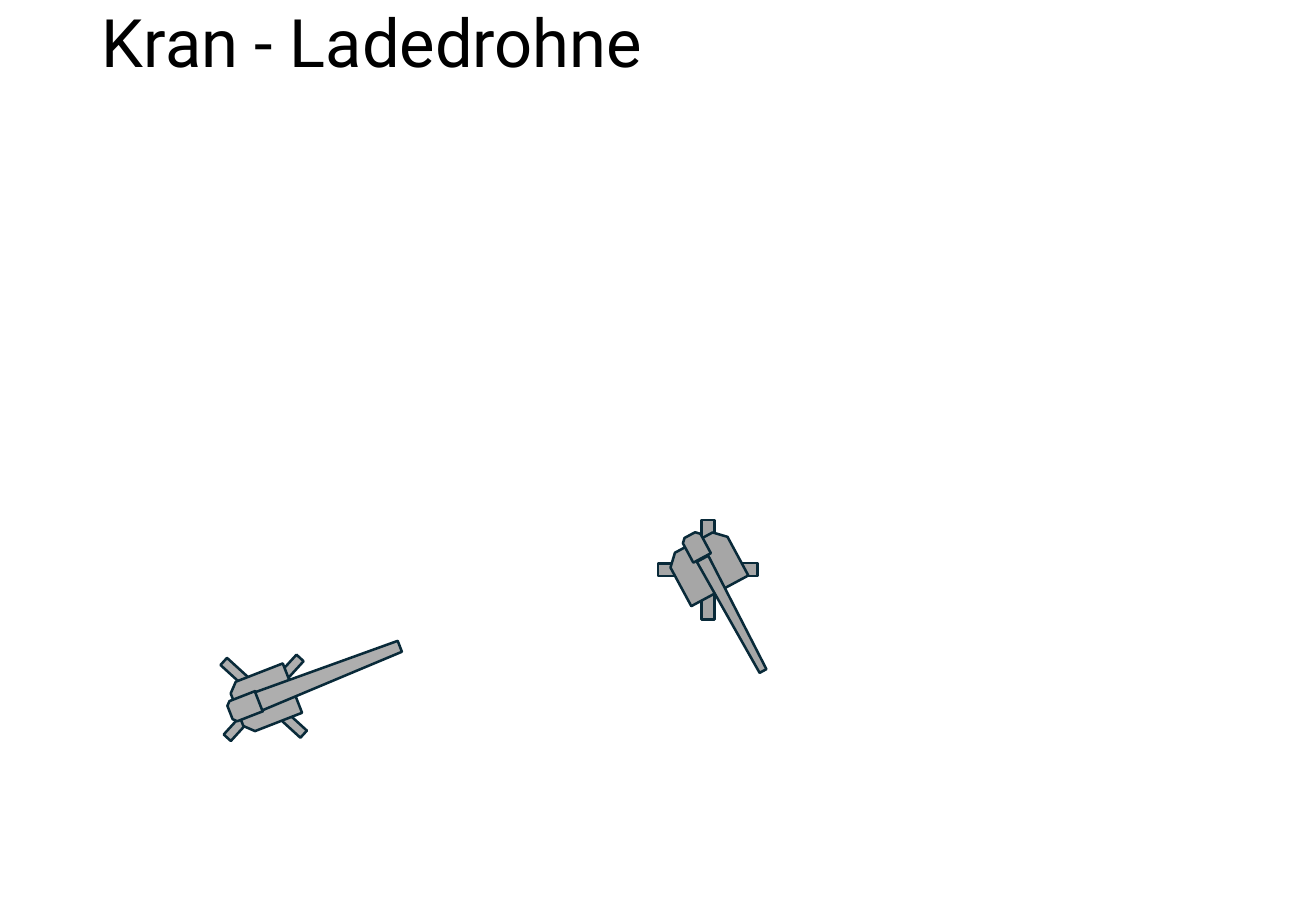
from dataclasses import dataclass
from math import cos, radians, sin

from pptx import Presentation
from pptx.dml.color import RGBColor
from pptx.enum.shapes import MSO_SHAPE
from pptx.enum.text import MSO_ANCHOR, PP_ALIGN
from pptx.util import Inches, Pt

RECTANGLE = MSO_SHAPE.RECTANGLE
SNIPPED = MSO_SHAPE.SNIP_2_SAME_RECTANGLE
TAPERED = MSO_SHAPE.FLOWCHART_MANUAL_OPERATION
MIDDLE = MSO_ANCHOR.MIDDLE
LEFT = PP_ALIGN.LEFT

GRID = Inches(0.1)  # one column or row of the slide grid


@dataclass(frozen=True)
class Theme:
    font: str = "Roboto"
    title_size: float = 39.6
    line_width: float = 1.5
    text: str = "000000"
    outline: str = "092A39"
    light_grey: str = "AEAEAE"
    mid_grey: str = "A6A6A6"


@dataclass(frozen=True)
class Drone:
    """Sizes and distances are shares of the span across the legs."""
    fill: str
    leg_angle: float
    heading: float    # rotation of body, cabin and boom
    pivot: tuple      # offset of the body from the hub
    leg: tuple        # length, thickness
    body: tuple       # width, height
    cabin: tuple      # width, height, distance along the boom axis
    boom: tuple       # width, height, distance along the boom axis
    snip: float


THEME = Theme()

WIDE_DRONE = Drone(
    fill=THEME.light_grey, leg_angle=42.4, heading=248.7, pivot=(0.01, 0.01),
    leg=(0.44, 0.09), body=(0.49, 0.55), cabin=(0.2, 0.29, -0.2),
    boom=(0.18, 1.4, 0.64), snip=0.17)
SLIM_DRONE = Drone(
    fill=THEME.mid_grey, leg_angle=0, heading=331.7, pivot=(-0.01, -0.03),
    leg=(0.41, 0.13), body=(0.65, 0.55), cabin=(0.2, 0.26, -0.23),
    boom=(0.13, 1.28, 0.55), snip=0.2)


def add_part(group, kind, center, size, rotation, fill):
    """Place one outlined part by its centre."""
    (x, y), (width, height) = center, size
    part = group.shapes.add_shape(
        kind, round(x - width / 2), round(y - height / 2), round(width), round(height))
    part.rotation = rotation
    part.shadow.inherit = False
    part.fill.solid()
    part.fill.fore_color.rgb = RGBColor.from_string(fill)
    part.line.color.rgb = RGBColor.from_string(THEME.outline)
    part.line.width = Pt(THEME.line_width)
    return part


def draw_drone(slide, box, drone):
    """Draw a crane drone whose legs span the square box."""
    left, top, span = (value * GRID for value in box)
    hub = (left + span / 2, top + span / 2)
    group = slide.shapes.add_group_shape()

    # Four legs around the hub
    leg_length, leg_thickness = drone.leg
    radius = span * (1 - leg_length) / 2
    for quarter in range(4):
        angle = drone.leg_angle + 90 * quarter
        center = (hub[0] + radius * cos(radians(angle)),
                  hub[1] + radius * sin(radians(angle)))
        size = (span * leg_length, span * leg_thickness)
        add_part(group, RECTANGLE, center, size, angle, drone.fill)

    # Body, cabin and boom along one axis
    axis = (-sin(radians(drone.heading)), cos(radians(drone.heading)))
    parts = ((SNIPPED, (*drone.body, 0)), (SNIPPED, drone.cabin), (TAPERED, drone.boom))
    for kind, (width, height, distance) in parts:
        center = [hub[i] + span * (drone.pivot[i] + distance * axis[i]) for i in range(2)]
        part = add_part(group, kind, center, (span * width, span * height),
                        drone.heading, drone.fill)
        if kind == SNIPPED:
            part.adjustments[0] = drone.snip


def draw_title(slide, box, text):
    title = slide.shapes.add_textbox(*(round(value * GRID) for value in box))
    frame = title.text_frame
    frame.word_wrap = True
    frame.vertical_anchor = MIDDLE
    para = frame.paragraphs[0]
    para.alignment = LEFT
    para.line_spacing = 0.9
    span = para.add_run()
    span.text = text
    span.font.name = THEME.font
    span.font.size = Pt(THEME.title_size)
    span.font.color.rgb = RGBColor.from_string(THEME.text)


def main():
    deck = Presentation()
    deck.slide_width, deck.slide_height = Inches(10.83), Inches(7.5)
    slide = deck.slides.add_slide(deck.slide_layouts[6])
    draw_drone(slide, (17.25, 53, 8.9), WIDE_DRONE)
    draw_drone(slide, (54.15, 42.8, 8.2), SLIM_DRONE)
    draw_title(slide, (7.4, 0.2, 93.4, 7.2), "Kran - Ladedrohne")
    deck.save("out.pptx")


if __name__ == "__main__":
    main()
